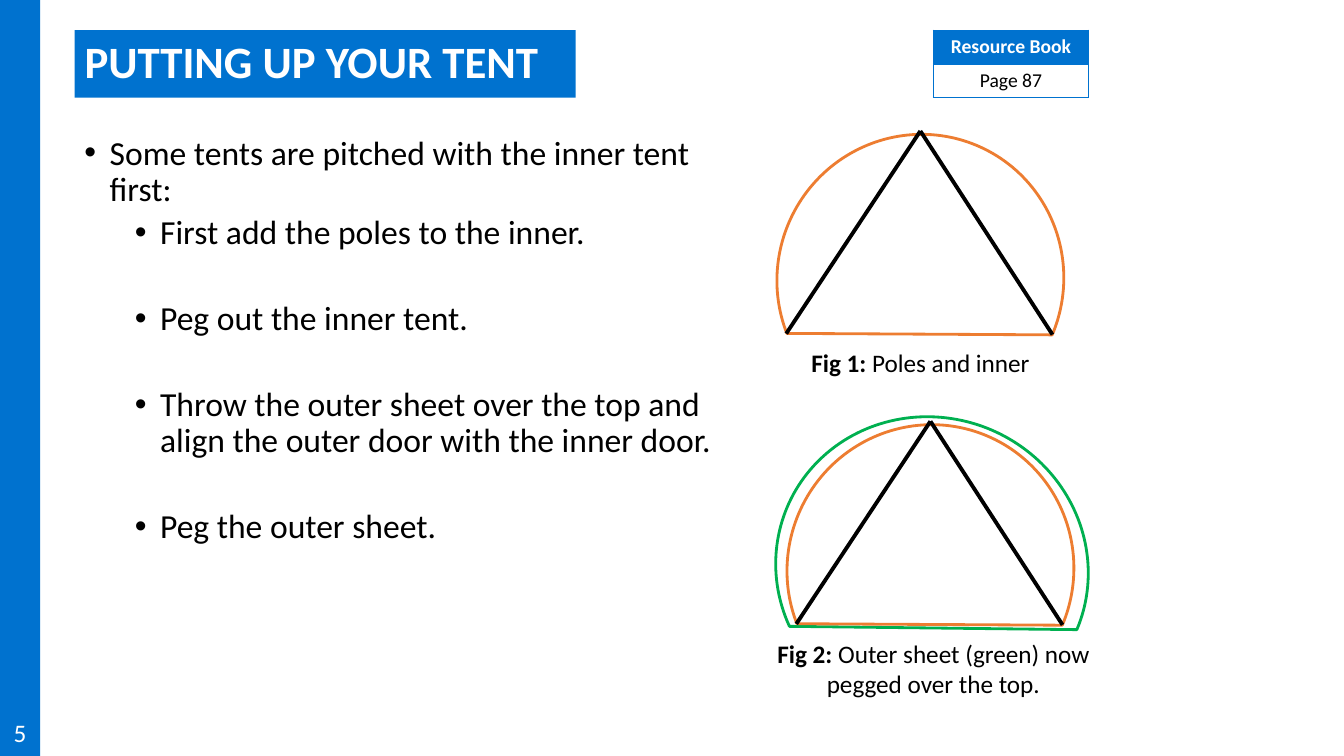
from lxml import etree
from pptx import Presentation
from pptx import util as u
from pptx.dml.color import RGBColor
from pptx.enum import shapes, text
from pptx.oxml import ns

BLUE, WHITE, BLACK = "0072CF", "FFFFFF", "000000"
ORANGE, GREEN = "ED7D31", "00B050"
WIDTH, HEIGHT = u.Inches(13.333), u.Inches(7.5)
CHORD, RECT = shapes.MSO_SHAPE.CHORD, shapes.MSO_SHAPE.RECTANGLE
CENTER, LEFT = text.PP_ALIGN.CENTER, text.PP_ALIGN.LEFT

STEPS = [
    "First add the poles to the inner.",
    "Peg out the inner tent.",
    "Throw the outer sheet over the top and align the outer door with the inner door.",
    "Peg the outer sheet.",
]


# Lengths are percentages of the slide's width and height
def across(share):
    return round(WIDTH * share / 100)


def down(share):
    return round(HEIGHT * share / 100)


def place(x, y, w, h):
    return across(x), down(y), across(w), down(h)


def color(value):
    return RGBColor.from_string(value)


def apply(target, values):
    for name, value in values.items():
        setattr(target, name, value)


def child(parent, tag, **attributes):
    return etree.SubElement(parent, ns.qn(tag), attributes)


# Text
def add_span(para, words, size, fill=BLACK, bold=False):
    span = para.add_run()
    span.text = words
    apply(span.font, {"name": "Calibri", "size": u.Pt(size), "bold": bold})
    span.font.color.rgb = color(fill)


def add_text(page, area, spans, align=LEFT, **frame_format):
    box = page.shapes.add_textbox(*place(*area))
    apply(box.text_frame, {"word_wrap": True, **frame_format})
    para = box.text_frame.paragraphs[0]
    para.alignment = align
    for words, values in spans:
        add_span(para, words, **values)
    return box


def add_bullet(para, words, indent, before):
    apply(para, {"line_spacing": 0.9, "space_before": u.Pt(before)})
    props = para._p.get_or_add_pPr()
    props.set("marL", str(u.Inches(indent)))
    props.set("indent", str(u.Inches(-0.25)))
    child(props, "a:buFont", typeface="Arial")
    child(props, "a:buChar", char="•")
    add_span(para, words, 24)


def add_steps(page):
    box = add_text(page, (5.55, 17.33, 50.18, 82.67), [])
    frame = box.text_frame
    add_bullet(frame.paragraphs[0], "Some tents are pitched with the inner tent first:", 0.25, 0)
    for number, step in enumerate(STEPS):
        add_bullet(frame.add_paragraph(), step, 0.75, 35.5 if number else 5)


def add_caption(page, area, label, words, align):
    add_text(page, area, [(label, {"size": 18, "bold": True}), (words, {"size": 18})], align)


# Shapes
def add_panel(page, area):
    panel = page.shapes.add_shape(RECT, *place(*area))
    panel.shadow.inherit = False
    panel.fill.solid()
    panel.fill.fore_color.rgb = color(BLUE)
    panel.line.fill.background()


def add_sheet(page, area, stroke):
    sheet = page.shapes.add_shape(CHORD, *place(*area))
    apply(sheet, {"rotation": 112.9})
    sheet.shadow.inherit = False
    sheet.fill.background()
    sheet.line.color.rgb = color(stroke)
    sheet.line.width = u.Pt(2)


def add_pole(page, x1, y1, x2, y2):
    pole = page.shapes.add_connector(
        shapes.MSO_CONNECTOR.STRAIGHT, across(x1), down(y1), across(x2), down(y2))
    pole.line.color.rgb = color(BLACK)
    pole.line.width = u.Pt(2.75)
    child(pole._element.spPr, "a:effectLst")


def add_tent(page, x, y, outer=False):
    """Draw a tent whose poles meet at (x, y)."""
    if outer:
        add_sheet(page, (x - 11.1, y - 1.33, 22.43, 41.6), GREEN)
    add_sheet(page, (x - 10.8, y + 0.67, 21.6, 37.87), ORANGE)
    add_pole(page, x - 9.98, y + 26.8, x, y)
    add_pole(page, x, y, x + 9.83, y + 26.93)


# Reference table
def add_reference(page, area, rows):
    frame = page.shapes.add_table(len(rows), 1, *place(*area))
    for row, (words, fill, ink, bold) in enumerate(rows):
        cell = frame.table.cell(row, 0)
        apply(cell, {"vertical_anchor": text.MSO_ANCHOR.MIDDLE})
        para = cell.text_frame.paragraphs[0]
        para.alignment = CENTER
        add_span(para, words, 14, ink, bold)
        props = cell._tc.get_or_add_tcPr()
        for side in ("a:lnL", "a:lnR", "a:lnT", "a:lnB"):
            border = child(props, side, w=str(u.Pt(1)))
            child(child(border, "a:solidFill"), "a:srgbClr", val=BLUE)
        cell.fill.solid()
        cell.fill.fore_color.rgb = color(fill)


def main():
    deck = Presentation()
    apply(deck, {"slide_width": WIDTH, "slide_height": HEIGHT})
    page = deck.slides.add_slide(deck.slide_layouts[6])

    # Side bar and page number
    add_panel(page, (0, 0, 3, 100))
    add_text(page, (0, 94.27, 3, 5.33), [("5", {"size": 18, "fill": WHITE})],
             CENTER, margin_left=0, margin_right=0)

    # Title and instructions
    title_area = (5.55, 4, 37.28, 8.93)
    add_panel(page, title_area)
    title = add_text(page, title_area,
                     [("PUTTING UP YOUR TENT", {"size": 32, "fill": WHITE, "bold": True})],
                     vertical_anchor=text.MSO_ANCHOR.MIDDLE)
    title.text_frame.paragraphs[0].line_spacing = 0.9
    add_steps(page)
    add_reference(page, (69.45, 4, 11.55, 8.93), [
        ("Resource Book", BLUE, WHITE, True),
        ("Page 87", WHITE, BLACK, False),
    ])

    # Figures
    add_tent(page, 68.48, 17.33)
    add_caption(page, (59.63, 45.33, 19.73, 5.33), "Fig 1: ", "Poles and inner", LEFT)
    add_tent(page, 69.23, 55.73, outer=True)
    add_caption(page, (57.08, 83.73, 24.75, 9.47), "Fig 2: ",
                "Outer sheet (green) now pegged over the top.", CENTER)

    deck.save("out.pptx")


if __name__ == "__main__":
    main()
